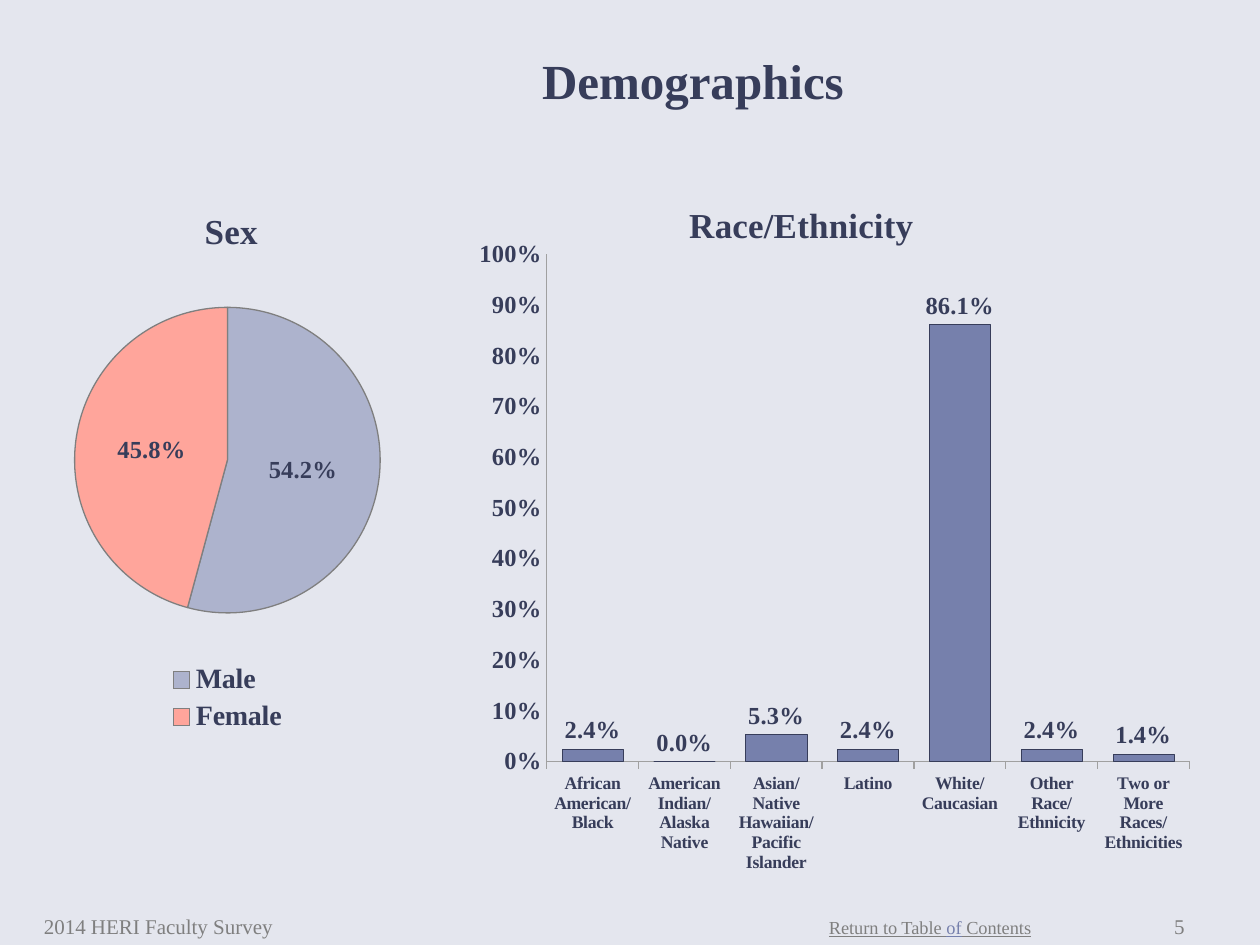
from pptx import Presentation
from pptx import util as u
from pptx.chart.data import CategoryChartData
from pptx.dml.color import RGBColor
from pptx.enum import chart as charts, text
from pptx.oxml import parse_xml
from pptx.oxml.ns import nsdecls, qn

PX = 9144
FONT = "Times New Roman"
BACKGROUND = RGBColor(0xE4, 0xE6, 0xEE)
NAVY = RGBColor(0x37, 0x3D, 0x5A)
BLUE = RGBColor(0x76, 0x80, 0xAC)
LIGHT_BLUE = RGBColor(0xAD, 0xB3, 0xCD)
PINK = RGBColor(0xFF, 0xA5, 0x9B)
GRAY = RGBColor(0x7F, 0x7F, 0x7F)
AXIS_GRAY = RGBColor(0xA0, 0xA0, 0xA0)


def style(font, size, color, bold=False):
    font.name = FONT
    font.size = u.Pt(size)
    font.color.rgb = color
    font.bold = bold


def add_text(slide, box, parts, size, bold=False, align=text.PP_ALIGN.LEFT,
             anchor=text.MSO_ANCHOR.BOTTOM, wrap=True, underline=None):
    shape = slide.shapes.add_textbox(*(value * PX for value in box))
    frame = shape.text_frame
    frame.word_wrap = wrap
    frame.vertical_anchor = anchor
    paragraph = frame.paragraphs[0]
    paragraph.alignment = align
    for words, color in parts:
        run = paragraph.add_run()
        run.text = words
        style(run.font, size, color, bold)
        run.font.underline = underline


def set_layout(chart, tag, index, inner=False, **fractions):
    element = chart.element.find(".//" + qn(tag))
    for layout in element.findall(qn("c:layout")):
        element.remove(layout)
    target = '<c:layoutTarget val="inner"/>' if inner else ""
    modes = '<c:xMode val="edge"/><c:yMode val="edge"/>'
    values = "".join(f'<c:{key} val="{value}"/>' for key, value in fractions.items())
    element.insert(index, parse_xml(
        f'<c:layout {nsdecls("c")}><c:manualLayout>{target}{modes}{values}'
        "</c:manualLayout></c:layout>"))


def add_chart(slide, box, kind, title, categories, values, number_format):
    data = CategoryChartData(number_format=number_format)
    data.categories = categories
    data.add_series("Series 1", values)
    frame = slide.shapes.add_chart(kind, *(value * PX for value in box), data)
    chart = frame.chart
    style(chart.font, 10, GRAY)
    chart.has_title = True
    chart.chart_title.text_frame.text = title
    style(chart.chart_title.text_frame.paragraphs[0].runs[0].font, 20, NAVY, True)
    return chart


def add_labels(plot, position):
    plot.has_data_labels = True
    labels = plot.data_labels
    labels.number_format = "0.0%"
    labels.number_format_is_linked = False
    labels.position = position
    style(labels.font, 14, NAVY, True)
    return labels


def add_sex_chart(slide, box):
    chart = add_chart(slide, box, charts.XL_CHART_TYPE.PIE, "Sex",
                      ["Male", "Female"], [54.2, 45.8], "General")
    plot = chart.plots[0]
    plot.vary_by_categories = True
    for index, color in enumerate((LIGHT_BLUE, PINK)):
        point = plot.series[0].points[index].format
        point.fill.solid()
        point.fill.fore_color.rgb = color
        point.line.color.rgb = GRAY
        point.line.width = u.Pt(0.75)
    labels = add_labels(plot, charts.XL_LABEL_POSITION.CENTER)
    labels.show_percentage = True
    labels.show_value = False
    chart.has_legend = True
    chart.legend.position = charts.XL_LEGEND_POSITION.RIGHT
    chart.legend.include_in_layout = False
    style(chart.legend.font, 16, NAVY, True)
    set_layout(chart, "c:title", 1, x=0.35, y=0.02)
    set_layout(chart, "c:plotArea", 0, True, x=0.03, y=0.17, w=0.79, h=0.48)
    set_layout(chart, "c:legend", 1, x=0.25, y=0.71, w=0.35, h=0.12)


def add_race_chart(slide, box):
    shares = {
        "African American/\nBlack": 0.024,
        "American Indian/\nAlaska Native": 0,
        "Asian/\nNative Hawaiian/\nPacific Islander": 0.053,
        "Latino": 0.024,
        "White/\nCaucasian": 0.861,
        "Other Race/\nEthnicity": 0.024,
        "Two or More\nRaces/\nEthnicities": 0.014,
    }
    chart = add_chart(slide, box, charts.XL_CHART_TYPE.COLUMN_CLUSTERED,
                      "Race/Ethnicity", list(shares), list(shares.values()), "0.0%")
    chart.has_legend = False
    plot = chart.plots[0]
    plot.gap_width = 50
    plot.vary_by_categories = False
    bars = plot.series[0].format
    bars.fill.solid()
    bars.fill.fore_color.rgb = BLUE
    bars.line.color.rgb = NAVY
    bars.line.width = u.Pt(0.25)
    add_labels(plot, charts.XL_LABEL_POSITION.OUTSIDE_END).show_value = True
    for axis, size in ((chart.category_axis, 10.1), (chart.value_axis, 14)):
        style(axis.tick_labels.font, size, NAVY, True)
        axis.format.line.color.rgb = AXIS_GRAY
        axis.format.line.width = u.Pt(0.75)
        axis.has_major_gridlines = False
    chart.category_axis.major_tick_mark = charts.XL_TICK_MARK.OUTSIDE
    axis = chart.value_axis
    axis.major_tick_mark = charts.XL_TICK_MARK.NONE
    axis.minimum_scale, axis.maximum_scale, axis.major_unit = 0, 1, 0.1
    axis.tick_labels.number_format = "0%"
    axis.tick_labels.number_format_is_linked = False
    set_layout(chart, "c:title", 1, x=0.32, y=0.01)
    set_layout(chart, "c:plotArea", 0, True, x=0.14, y=0.09, w=0.85, h=0.7)


def add_footer(slide, left, top, width, height):
    add_text(slide, (left, top, 317, height), [("2014 HERI Faculty Survey", GRAY)], 12)
    add_text(slide, (left + 623, top + 22, 182, 28),
             [("Return to Table ", GRAY), ("of", BLUE), (" Contents", GRAY)], 10.5,
             anchor=text.MSO_ANCHOR.TOP, wrap=False, underline=True)
    add_text(slide, (left + width - 50, top, 50, height), [("5", GRAY)], 12,
             align=text.PP_ALIGN.RIGHT)


def main():
    presentation = Presentation()
    presentation.slide_width = 1000 * PX
    presentation.slide_height = 750 * PX
    slide = presentation.slides.add_slide(presentation.slide_layouts[6])
    slide.background.fill.solid()
    slide.background.fill.fore_color.rgb = BACKGROUND
    add_text(slide, (100, 17, 900, 92), [("Demographics", NAVY)], 28, True,
             text.PP_ALIGN.CENTER, text.MSO_ANCHOR.MIDDLE)
    add_sex_chart(slide, (50, 150, 307, 525))
    add_race_chart(slide, (350, 150, 600, 575))
    add_footer(slide, 25, 700, 925, 50)
    presentation.save("out.pptx")


if __name__ == "__main__":
    main()
